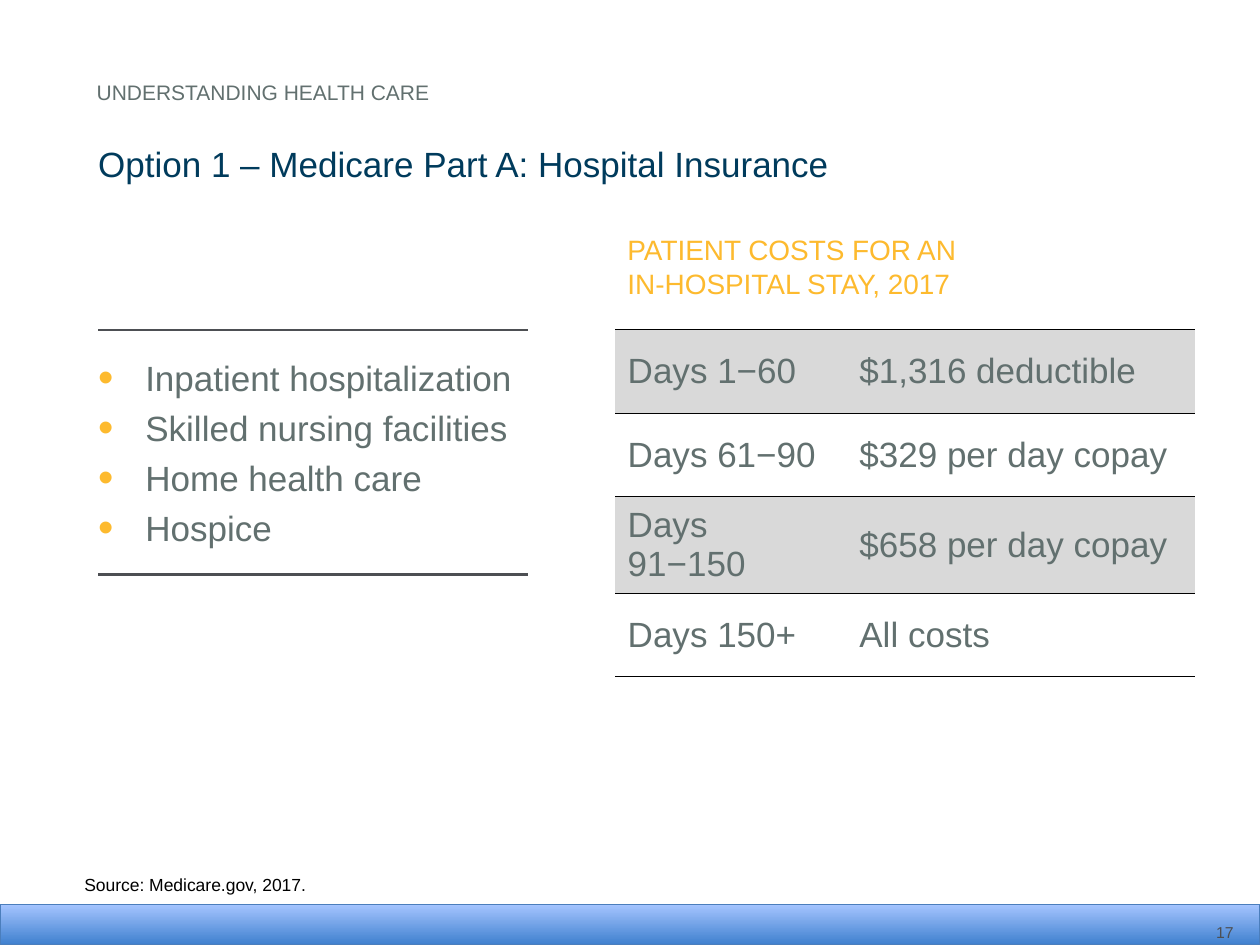
from dataclasses import dataclass

from lxml.etree import SubElement
from pptx import Presentation
from pptx.dml.color import RGBColor
from pptx.enum.shapes import MSO_CONNECTOR, MSO_SHAPE
from pptx.enum.text import MSO_ANCHOR, PP_ALIGN
from pptx.oxml import parse_xml
from pptx.oxml.ns import nsdecls, qn
from pptx.util import Cm, Pt


@dataclass(frozen=True)
class Theme:
    font: str = "Arial"
    body: str = "62706F"
    navy: str = "003B5C"
    gold: str = "FDBA2E"
    rule: str = "4D4F53"
    black: str = "000000"
    white: str = "FFFFFF"
    band: str = "D9D9D9"
    low: str = "3F80CE"
    high: str = "A4C4FF"
    edge: str = "4B7EBC"
    large: int = 20
    medium: int = 16
    small: int = 12
    note: int = 10
    tiny: int = 9


@dataclass(frozen=True)
class Label:
    """A text box: its paragraphs, place in cm, and look."""
    lines: tuple[str, ...]
    box: tuple[float, float, float, float]
    size: int
    color: str
    anchor: MSO_ANCHOR = MSO_ANCHOR.TOP
    align: PP_ALIGN = PP_ALIGN.LEFT
    gap: float = 0.23
    bullet: bool = False
    tight: bool = False


THEME = Theme()
NO_STYLE = "{2D5ABB26-0587-4C30-8999-92F81FD0307C}"
TOP = 6.65
RIGHT = 12.4
RULES = (TOP, 11.58)
COLS = (4.67, 7.02)
ROW = 1.68
COSTS = (
    ("Days 1−60", "$1,316 deductible"),
    ("Days 61−90", "$329 per day copay"),
    ("Days 91−150", "$658 per day copay"),
    ("Days 150+", "All costs"),
)
LABELS = (
    Label(("UNDERSTANDING HEALTH CARE",), (1.7, 0.64, 22, 1.47),
          THEME.small, THEME.body, MSO_ANCHOR.BOTTOM, tight=True),
    Label(("Option 1 – Medicare Part A: Hospital Insurance",),
          (1.73, 2.74, 22, 1.98), THEME.large, THEME.navy),
    Label(("Source: Medicare.gov, 2017.",), (1.45, 17.5, 23.9, 0.69),
          THEME.note, THEME.black, gap=0),
    Label(("Inpatient hospitalization", "Skilled nursing facilities",
           "Home health care", "Hospice"), (1.73, 7.06, 9.17, 4.04),
          THEME.large, THEME.body, bullet=True),
    Label(("PATIENT COSTS FOR AN\nIN-HOSPITAL STAY, 2017",),
          (RIGHT, 4.57, 12.47, 1.63), THEME.medium, THEME.gold),
)
PAGE = Label(("17",), (18.95, 18.39, 5.92, 0.66), THEME.tiny, THEME.rule,
             MSO_ANCHOR.MIDDLE, PP_ALIGN.RIGHT, gap=0, tight=True)


def rgb(color: str) -> RGBColor:
    return RGBColor.from_string(color)


def style(para, size: int, color: str) -> None:
    for run in para.runs:
        run.font.name = THEME.font
        run.font.size = Pt(size)
        run.font.color.rgb = rgb(color)


def add_dot(para) -> None:
    """Give the paragraph a hanging gold bullet."""
    props = para._p.get_or_add_pPr()
    props.set("marL", str(Cm(0.95)))
    props.set("indent", str(-Cm(0.95)))
    tint = SubElement(props, qn("a:buClr"))
    SubElement(tint, qn("a:srgbClr"), val=THEME.gold)
    SubElement(props, qn("a:buSzPct"), val="125000")
    SubElement(props, qn("a:buFont"), typeface=THEME.font)
    SubElement(props, qn("a:buChar"), char="•")


def add_label(slide, label: Label) -> None:
    frame = slide.shapes.add_textbox(*map(Cm, label.box)).text_frame
    frame.word_wrap = True
    frame.vertical_anchor = label.anchor
    if label.tight:
        frame.margin_bottom = 0
    if label.align == PP_ALIGN.RIGHT:
        frame.margin_right = 0
    for i, line in enumerate(label.lines):
        para = frame.add_paragraph() if i else frame.paragraphs[0]
        para.text = line
        para.alignment = label.align
        para.space_before = Pt(round(label.size * label.gap, 1))
        if label.bullet:
            add_dot(para)
        style(para, label.size, label.color)


def add_rule(slide, top: float) -> None:
    line = slide.shapes.add_connector(
        MSO_CONNECTOR.STRAIGHT, Cm(1.98), Cm(top), Cm(10.64), Cm(top))
    line.line.color.rgb = rgb(THEME.rule)
    line.line.width = Pt(1.25)
    SubElement(line._element.spPr, qn("a:effectLst"))


def add_edges(cell) -> None:
    """Draw thin lines above and below the cell."""
    props = cell._tc.get_or_add_tcPr()
    for i, side in enumerate(("lnT", "lnB")):
        props.insert(i, parse_xml(
            f'<a:{side} {nsdecls("a")} w="{Pt(0.5)}"><a:solidFill>'
            f'<a:srgbClr val="{THEME.black}"/></a:solidFill></a:{side}>'))


def add_costs(slide) -> None:
    table = slide.shapes.add_table(
        len(COSTS), len(COLS), Cm(RIGHT), Cm(TOP),
        Cm(sum(COLS)), Cm(ROW * len(COSTS))).table
    table.first_row = table.horz_banding = False
    table._tbl.tblPr.find(qn("a:tableStyleId")).text = NO_STYLE
    for col, width in zip(table.columns, COLS):
        col.width = Cm(width)
    for r, texts in enumerate(COSTS):
        table.rows[r].height = Cm(ROW)
        for c, text in enumerate(texts):
            cell = table.cell(r, c)
            cell.text_frame.text = text
            cell.vertical_anchor = MSO_ANCHOR.MIDDLE
            cell.fill.solid()
            cell.fill.fore_color.rgb = rgb(THEME.white if r % 2 else THEME.band)
            style(cell.text_frame.paragraphs[0], THEME.large, THEME.body)
            add_edges(cell)


def add_bar(slide) -> None:
    bar = slide.shapes.add_shape(
        MSO_SHAPE.RECTANGLE, 0, Cm(18.24), Cm(25.4), Cm(0.81))
    bar.shadow.inherit = False
    bar.fill.gradient()
    bar.fill.gradient_angle = 90
    for stop, place, color in zip(
            bar.fill.gradient_stops, (0, 1), (THEME.low, THEME.high)):
        stop.position = place
        stop.color.rgb = rgb(color)
    bar.line.color.rgb = rgb(THEME.edge)
    bar.line.width = Pt(0.75)


def main() -> None:
    deck = Presentation()
    deck.slide_width, deck.slide_height = Cm(25.4), Cm(19.05)
    slide = deck.slides.add_slide(deck.slide_layouts[6])
    for label in LABELS:
        add_label(slide, label)
    for top in RULES:
        add_rule(slide, top)
    add_costs(slide)
    add_bar(slide)
    add_label(slide, PAGE)
    deck.save("out.pptx")


if __name__ == "__main__":
    main()
